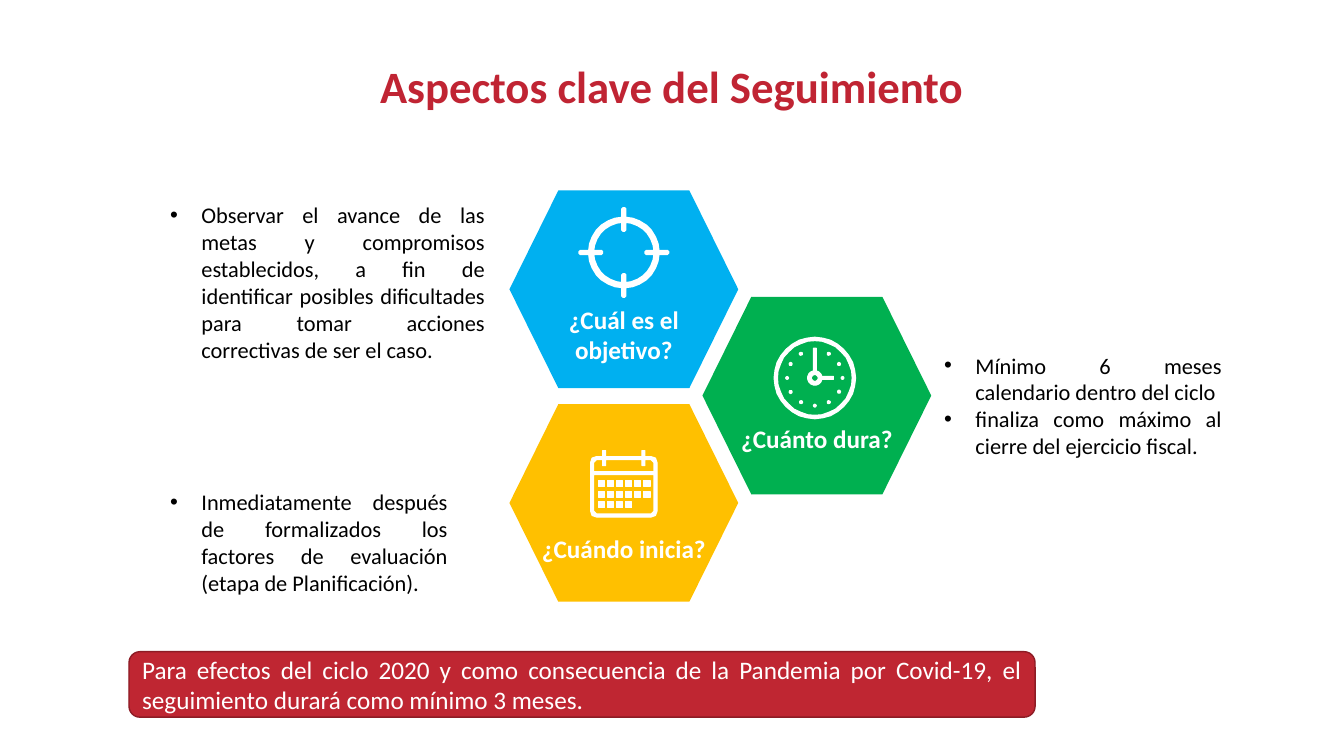
from dataclasses import dataclass
from math import asin, cos, pi, sin

from lxml.etree import SubElement
from pptx import Presentation
from pptx.dml.color import RGBColor
from pptx.enum.shapes import MSO_SHAPE
from pptx.enum.text import MSO_ANCHOR, PP_ALIGN
from pptx.oxml.ns import qn
from pptx.shapes.autoshape import Shape
from pptx.slide import Slide
from pptx.text.text import TextFrame
from pptx.util import Emu, Pt

SCALE = 4572
Loop = list[tuple[float, float]]


@dataclass(frozen=True)
class Theme:
    font: str = "Calibri"
    title: str = "C02433"
    ink: str = "000000"
    white: str = "FFFFFF"
    blue: str = "00B0F0"
    green: str = "00B050"
    gold: str = "FFC000"
    bar: str = "BF2632"
    edge: str = "8D1C25"
    head_size: int = 32
    label_size: int = 18
    note_size: int = 16


THEME = Theme()


@dataclass(frozen=True)
class Box:
    left: int
    top: int
    width: int
    height: int


@dataclass(frozen=True)
class Hex:
    left: int
    top: int
    fill: str
    label: str
    drop: int


@dataclass(frozen=True)
class Note:
    box: Box
    items: tuple[str, ...]


@dataclass(frozen=True)
class Icon:
    left: int
    top: int
    loops: list[Loop]
    weight: float


HEXES = (
    Hex(1011, 802, THEME.gold, "¿Cuándo inicia?", 256),
    Hex(1394, 589, THEME.green, "¿Cuánto dura?", 250),
    Hex(1011, 378, THEME.blue, "¿Cuál es el objetivo?", 226),
)
NOTES = (
    Note(Box(1854, 688, 590, 236), (
        "Mínimo 6 meses calendario dentro del ciclo",
        "finaliza como máximo al cierre del ejercicio fiscal.",
    )),
    Note(Box(318, 959, 590, 236), (
        "Inmediatamente después de formalizados los factores de evaluación "
        "(etapa de Planificación).",
    )),
    Note(Box(318, 390, 664, 398), (
        "Observar el avance de las metas y compromisos establecidos, a fin de "
        "identificar posibles dificultades para tomar acciones correctivas de ser el caso.",
    )),
)


def px(size: int) -> Emu:
    return Emu(size * SCALE)


def tint(code: str) -> RGBColor:
    return RGBColor.from_string(code)


def write(frame: TextFrame, items: tuple[str, ...], size: int, ink: str,
          align: PP_ALIGN, bold: bool = False, dots: bool = False) -> None:
    frame.word_wrap = True
    for i, item in enumerate(items):
        para = frame.add_paragraph() if i else frame.paragraphs[0]
        para.alignment = align
        if dots:
            props = para._p.get_or_add_pPr()
            props.set("marL", str(px(62)))
            props.set("indent", str(px(-62)))
            SubElement(props, qn("a:buFont")).set("typeface", "Arial")
            SubElement(props, qn("a:buChar")).set("char", "•")
        run = para.add_run()
        run.text = item
        run.font.name = THEME.font
        run.font.size = Pt(size)
        run.font.bold = bold
        run.font.color.rgb = tint(ink)


def paint(shape: Shape, fill: str, edge: str | None = None, weight: float = 1) -> None:
    shape.shadow.inherit = False
    shape.fill.solid()
    shape.fill.fore_color.rgb = tint(fill)
    if edge:
        shape.line.color.rgb = tint(edge)
        shape.line.width = Pt(weight)
    else:
        shape.line.fill.background()


def add_text(slide: Slide, box: Box) -> TextFrame:
    return slide.shapes.add_textbox(
        px(box.left), px(box.top), px(box.width), px(box.height)).text_frame


def add_form(slide: Slide, left: int, top: int, loops: list[Loop]) -> Shape:
    pen = slide.shapes.build_freeform(*loops[0][0], scale=SCALE)
    for i, loop in enumerate(loops):
        if i:
            pen.move_to(*loop[0])
        pen.add_line_segments(loop[1:], close=True)
    return pen.convert_to_shape(px(left), px(top))


def add_hex(slide: Slide, cell: Hex) -> None:
    wide, tall, cut = 454, 392, 97
    shape = add_form(slide, cell.left, cell.top, [[
        (cut, 0), (wide - cut, 0), (wide, tall // 2),
        (wide - cut, tall), (cut, tall), (0, tall // 2),
    ]])
    paint(shape, cell.fill)
    frame = shape.text_frame
    frame.vertical_anchor = MSO_ANCHOR.TOP
    frame.margin_left = frame.margin_right = px(40)
    frame.margin_top, frame.margin_bottom = px(cell.drop), px(0)
    write(frame, (cell.label,), THEME.label_size, THEME.white, PP_ALIGN.CENTER, bold=True)


def add_icon(slide: Slide, icon: Icon) -> None:
    paint(add_form(slide, icon.left, icon.top, icon.loops),
          THEME.white, THEME.white, icon.weight)


def rim(x: float, y: float, reach: float, steps: int, half: float = 0,
        tips: tuple[int, ...] = (0, 0, 0, 0)) -> Loop:
    loop: Loop = []
    gap = asin(half / reach)
    for side, tip in enumerate(tips):
        base = side * pi / 2
        if tip:
            for off in (-half, half):
                loop.append((x + tip * cos(base) - off * sin(base),
                             y + tip * sin(base) + off * cos(base)))
        for i in range(steps + 1 if half else steps):
            turn = base + gap + (pi / 2 - 2 * gap) * i / steps
            loop.append((x + reach * cos(turn), y + reach * sin(turn)))
    return loop


def target() -> list[Loop]:
    return [rim(87, 87, reach, 7, 2, (tip,) * 4) for reach, tip in ((68, 87), (62, 44))]


def clock() -> list[Loop]:
    mid = 81
    dots = [rim(mid + 55 * sin(h * pi / 6), mid - 55 * cos(h * pi / 6), 3, 2)
            for h in range(1, 12)]
    return [rim(mid, mid, 81, 8), rim(mid, mid, 74, 8),
            rim(mid, mid, 14, 3, 3, (37, 0, 0, 59)), rim(mid, mid, 7, 3), *dots]


def dates() -> list[Loop]:
    cover: Loop = [
        (0, 24), (3, 15), (12, 12), (24, 12), (24, 0), (30, 0), (30, 12),
        (102, 12), (102, 0), (108, 0), (108, 12), (120, 12), (129, 15),
        (132, 24), (132, 120), (129, 129), (120, 132), (12, 132), (3, 129), (0, 120),
    ]
    band: Loop = [
        (6, 24), (12, 18), (24, 18), (24, 30), (30, 30), (30, 18), (102, 18),
        (102, 30), (108, 30), (108, 18), (120, 18), (126, 24), (126, 42), (6, 42),
    ]
    page: Loop = [(6, 48), (126, 48), (126, 120), (120, 126), (12, 126), (6, 120)]
    days: list[Loop] = []
    for row, count in enumerate((6, 6, 4)):
        for col in range(count):
            x, y = 16 + 18 * col, 60 + 21 * row
            days.append([(x, y), (x + 12, y), (x + 12, y + 12), (x, y + 12)])
    return [cover, band, page, *days]


def main() -> None:
    deck = Presentation()
    deck.slide_width, deck.slide_height = px(2667), px(1500)
    slide = deck.slides.add_slide(deck.slide_layouts[6])
    for cell in HEXES:
        add_hex(slide, cell)
    for icon in (Icon(1151, 414, target(), 2.25), Icon(1172, 894, dates(), 0.75),
                 Icon(1536, 669, clock(), 0.75)):
        add_icon(slide, icon)
    head = add_text(slide, Box(338, 118, 1990, 130))
    write(head, ("Aspectos clave del Seguimiento",),
          THEME.head_size, THEME.title, PP_ALIGN.CENTER, bold=True)
    head.paragraphs[0].line_spacing = 0.9
    for note in NOTES:
        write(add_text(slide, note.box), note.items, THEME.note_size, THEME.ink,
              PP_ALIGN.JUSTIFY, dots=True)
    bar = slide.shapes.add_shape(
        MSO_SHAPE.ROUNDED_RECTANGLE, px(256), px(1293), px(1798), px(130))
    paint(bar, THEME.bar, THEME.edge)
    bar.text_frame.vertical_anchor = MSO_ANCHOR.MIDDLE
    write(bar.text_frame, (
        "Para efectos del ciclo 2020 y como consecuencia de la Pandemia por Covid-19, "
        "el seguimiento durará como mínimo 3 meses.",
    ), THEME.label_size, THEME.white, PP_ALIGN.JUSTIFY)
    deck.save("out.pptx")


if __name__ == "__main__":
    main()
